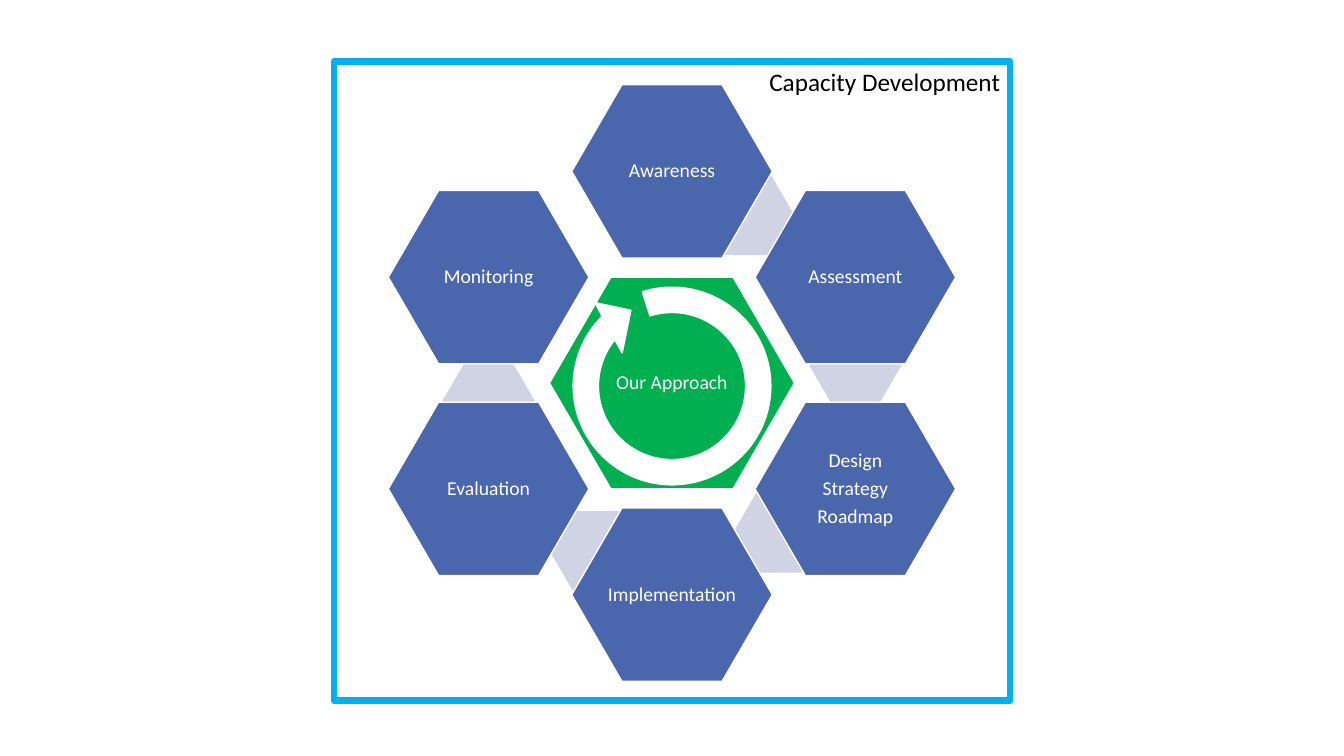
import math

from pptx import Presentation
from pptx.dml.color import RGBColor
from pptx.enum.shapes import MSO_SHAPE
from pptx.enum.text import MSO_ANCHOR, MSO_AUTO_SIZE, PP_ALIGN
from pptx.util import Inches, Pt

HEXAGON, CIRCULAR_ARROW = MSO_SHAPE.HEXAGON, MSO_SHAPE.CIRCULAR_ARROW
TOP, MIDDLE = MSO_ANCHOR.TOP, MSO_ANCHOR.MIDDLE
CENTER, RIGHT = PP_ALIGN.CENTER, PP_ALIGN.RIGHT
NO_AUTOFIT = MSO_AUTO_SIZE.NONE

BLACK = RGBColor(0x00, 0x00, 0x00)
WHITE = RGBColor(0xFF, 0xFF, 0xFF)
SKY = RGBColor(0x00, 0xB0, 0xF0)
GREEN = RGBColor(0x00, 0xB0, 0x50)
BLUE = RGBColor(0x4A, 0x66, 0xAC)
PALE = RGBColor(0xD0, 0xD3, 0xE3)

FONT = "Calibri"
FRAME = (3.31, 0.61, 6.71, 6.34)
CENTER_LABEL = "Our Approach"
STEPS = ["Awareness", "Assessment", "Design\nStrategy\nRoadmap",
         "Implementation", "Evaluation", "Monitoring"]
RING_RADIUS = 2.1
LINK_DISTANCE = 0.87
STEP_SIZE = (1.99, 1.72)
CORE_SIZE = (2.43, 2.1)
LINK_SIZE = (0.92, 0.79)
ARROW_SIZE = (2.28, 2.28)


def point_around(center, radius, degrees):
    """Return the point at a clockwise angle, measured from twelve o'clock."""
    angle = math.radians(degrees)
    return center[0] + radius * math.sin(angle), center[1] - radius * math.cos(angle)


def add_centered_shape(slide, kind, center, size, fill, line=None):
    width, height = size
    shape = slide.shapes.add_shape(
        kind, Inches(center[0] - width / 2), Inches(center[1] - height / 2),
        Inches(width), Inches(height))
    shape.shadow.inherit = False
    shape.fill.solid()
    shape.fill.fore_color.rgb = fill
    if line is None:
        shape.line.fill.background()
    else:
        shape.line.color.rgb = line
        shape.line.width = Pt(1)
    return shape


def add_hexagon(slide, center, size, fill, line=None, label=None):
    shape = add_centered_shape(slide, HEXAGON, center, size, fill, line)
    shape.adjustments[0] = 0.29
    if label is None:
        return
    frame = shape.text_frame
    frame.text = label
    frame.word_wrap = False
    frame.vertical_anchor = MIDDLE
    frame.margin_left = frame.margin_right = Inches(0.02)
    frame.margin_top = frame.margin_bottom = Inches(0.02)
    for paragraph in frame.paragraphs:
        paragraph.alignment = CENTER
        paragraph.line_spacing = 0.9
        paragraph.space_after = Pt(5)
        paragraph.font.name = FONT
        paragraph.font.size = Pt(14)
        paragraph.font.color.rgb = WHITE


def format_title_frame(slide, box):
    """Let the title placeholder outline the whole diagram."""
    title = slide.shapes.title
    title.left, title.top, title.width, title.height = map(Inches, box)
    title.line.color.rgb = SKY
    title.line.width = Pt(4.5)
    frame = title.text_frame
    frame.text = "Capacity Development"
    frame.auto_size = NO_AUTOFIT
    frame.word_wrap = True
    frame.vertical_anchor = TOP
    paragraph = frame.paragraphs[0]
    paragraph.alignment = RIGHT
    paragraph.font.name = FONT
    paragraph.font.size = Pt(18)
    paragraph.font.color.rgb = BLACK


def add_approach_cycle(slide, box):
    left, top, width, height = box
    center = (left + width / 2, top + height / 2 + 0.02)
    add_hexagon(slide, center, CORE_SIZE, GREEN, WHITE, CENTER_LABEL)

    turn = 360 / len(STEPS)
    for index, label in enumerate(STEPS):
        step_center = point_around(center, RING_RADIUS, index * turn)
        if index < len(STEPS) - 1:
            toward_next = 90 + (index + 0.5) * turn
            link_center = point_around(step_center, LINK_DISTANCE, toward_next)
            add_hexagon(slide, link_center, LINK_SIZE, PALE)
        add_hexagon(slide, step_center, STEP_SIZE, BLUE, WHITE, label)

    arrow_center = (center[0], center[1] + 0.03)
    arrow = add_centered_shape(
        slide, CIRCULAR_ARROW, arrow_center, ARROW_SIZE, WHITE, WHITE)
    arrow.rotation = 72.5
    for index, value in enumerate([0.11, 11.42, 90, 108, 0.125]):
        arrow.adjustments[index] = value


def main():
    presentation = Presentation()
    presentation.slide_width = Inches(13.33)
    presentation.slide_height = Inches(7.5)
    slide = presentation.slides.add_slide(presentation.slide_layouts[5])
    format_title_frame(slide, FRAME)
    add_approach_cycle(slide, FRAME)
    presentation.save("out.pptx")


if __name__ == "__main__":
    main()
